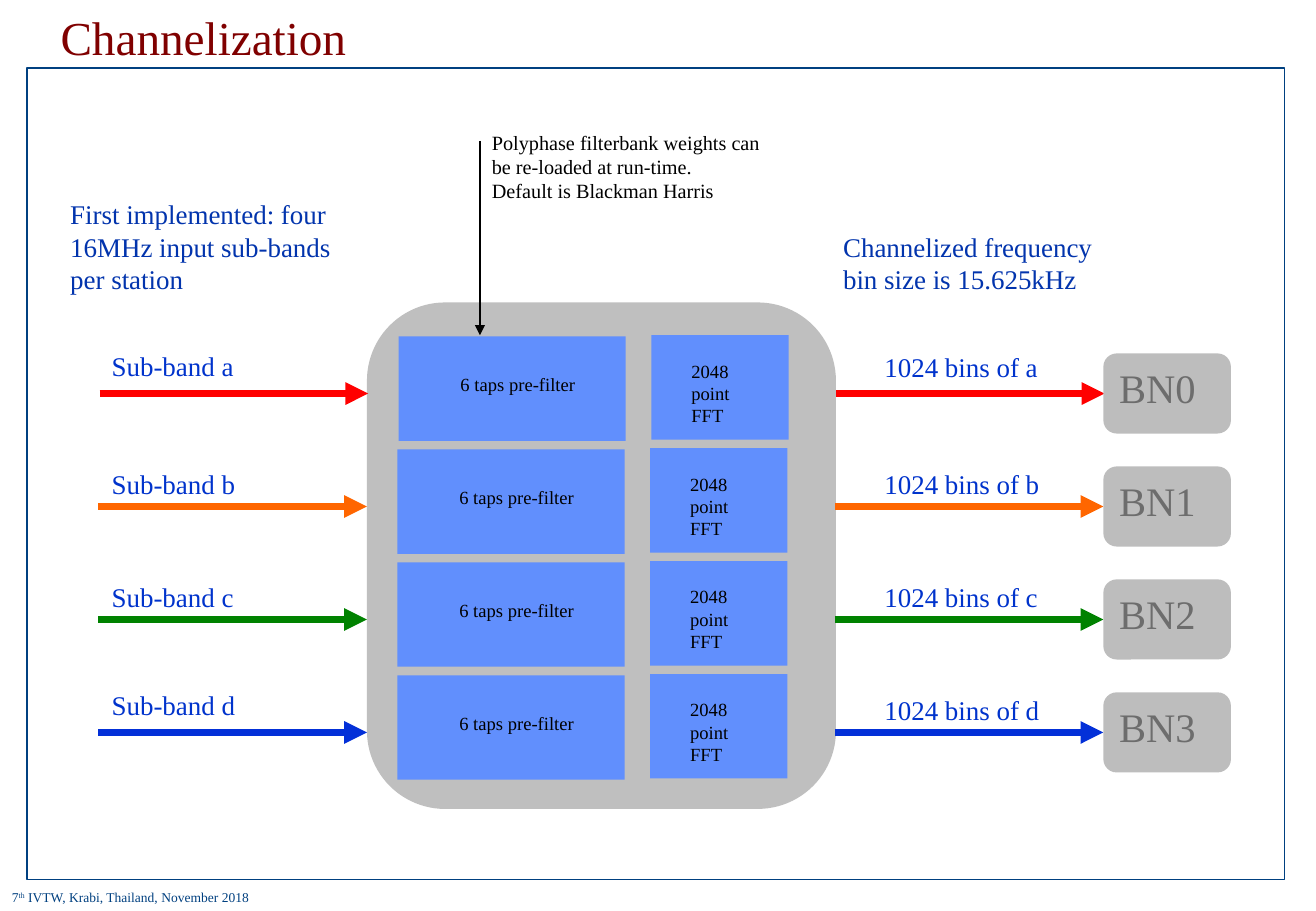
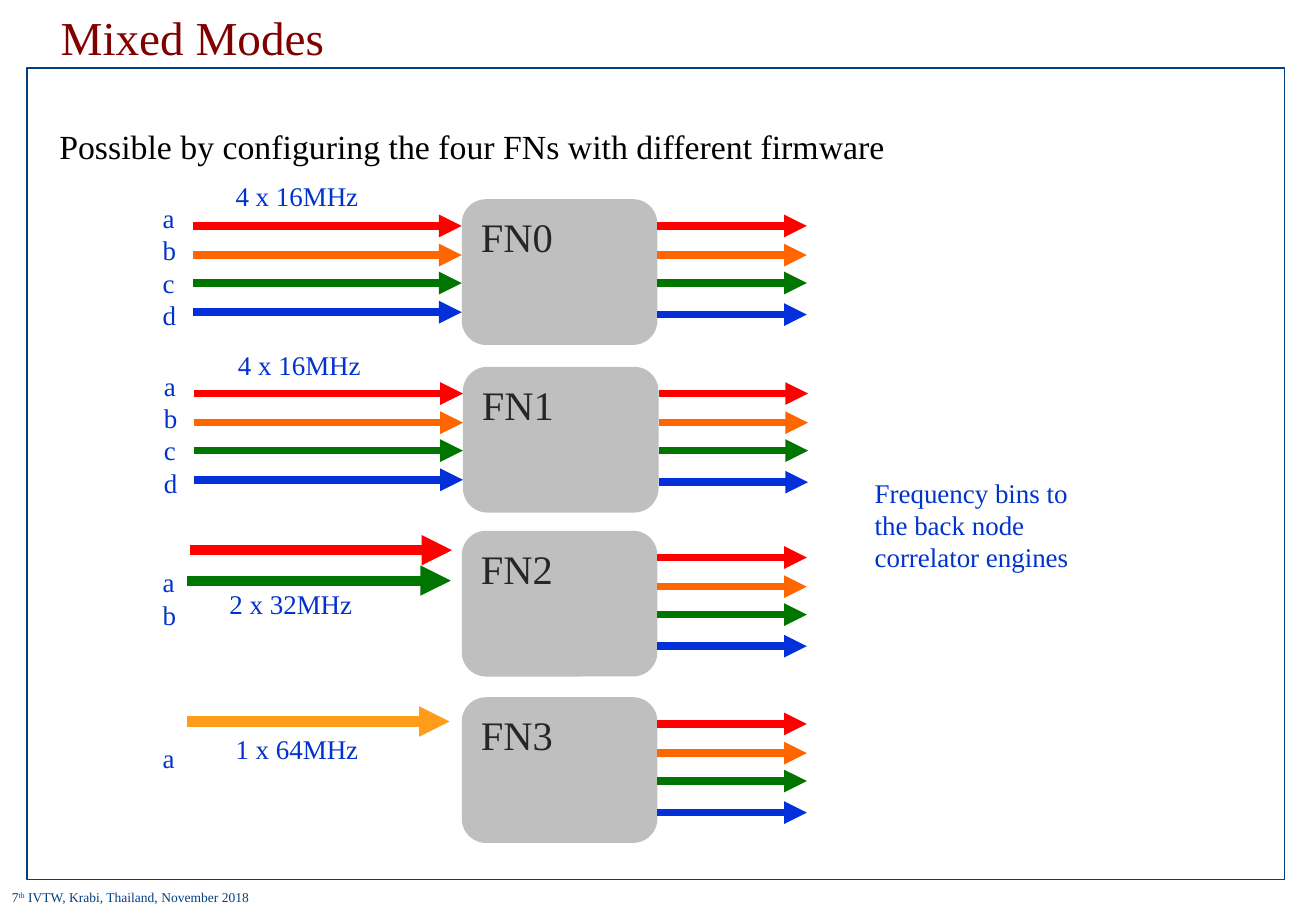
from lxml.etree import SubElement
from pptx import Presentation
from pptx.dml.color import RGBColor
from pptx.enum.shapes import MSO_CONNECTOR as Connector, MSO_SHAPE as Shape
from pptx.enum.text import MSO_ANCHOR as Anchor, PP_ALIGN as Align
from pptx.oxml.ns import qn
from pptx.util import Inches, Pt

FONT = "Times New Roman"
NAVY, MAROON, BLACK = "004080", "800000", "000000"
NOTE_BLUE, LABEL_BLUE, BLOCK_BLUE = "0234AD", "0033CC", "618FFD"
NODE_GREY, BACK_GREY, NODE_TEXT, BACK_TEXT = "BFBFBF", "BDBDBD", "262626", "6D6D6D"
RED, ORANGE, GREEN, BLUE, AMBER = "FF0000", "FF6600", "007600", "0330D8", "FF9D1B"
BANDS = "abcd"


def rgb(value):
    return RGBColor.from_string(value)


class Deck:
    """Holds the presentation, its shared style and the current slide."""

    def __init__(self):
        self.prs = Presentation()
        self.prs.slide_width, self.prs.slide_height = Inches(10.83), Inches(7.5)
        self.slide = None

    def new_slide(self, title):
        """Start a slide with the shared frame, footer and title."""
        self.slide = self.prs.slides.add_slide(self.prs.slide_layouts[6])
        self.block(0.22, 0.56, 10.35, 6.68, line=NAVY)
        self.footer()
        heading = self.text(0.4, 0, 8.98, 0.55, title, 28, MAROON)
        heading.vertical_anchor = Anchor.MIDDLE
        heading.paragraphs[0].line_spacing = 1.1

    def footer(self):
        frame = self.text(0, 7.27, 3.27, 0.24, "", 8, NAVY)
        paragraph = frame.paragraphs[0]
        for part in ("7", "th", " IVTW, Krabi, Thailand, November 2018"):
            run = paragraph.add_run()
            run.text = part
            self.style(run.font, 8, NAVY)
            if part == "th":
                run.font._element.set("baseline", "30000")

    def style(self, font, size, color):
        font.name, font.size = FONT, Pt(size)
        font.color.rgb = rgb(color)

    def fill_text(self, frame, text, size, color):
        """Fill a text frame, one paragraph per line, left and top aligned."""
        frame.text = text
        frame.vertical_anchor = Anchor.TOP
        for paragraph in frame.paragraphs:
            paragraph.alignment = Align.LEFT
            for run in paragraph.runs:
                self.style(run.font, size, color)

    def text(self, left, top, width, height, text, size, color, wrap=True):
        box = self.slide.shapes.add_textbox(
            Inches(left), Inches(top), Inches(width), Inches(height))
        frame = box.text_frame
        frame.word_wrap = wrap
        self.fill_text(frame, text, size, color)
        return frame

    def label(self, left, top, width, text):
        self.text(left, top, width, 0.37, text, 16, LABEL_BLUE, wrap=False)

    def block(self, left, top, width, height, fill=None, line=None, rounded=False):
        preset = Shape.ROUNDED_RECTANGLE if rounded else Shape.RECTANGLE
        block = self.slide.shapes.add_shape(
            preset, Inches(left), Inches(top), Inches(width), Inches(height))
        block.shadow.inherit = False
        if fill:
            block.fill.solid()
            block.fill.fore_color.rgb = rgb(fill)
        else:
            block.fill.background()
        if line:
            block.line.color.rgb = rgb(line)
            block.line.width = Pt(1)
        else:
            block.line.fill.background()
        return block

    def node(self, left, top, width, height, name, fill, color):
        node = self.block(left, top, width, height, fill, rounded=True)
        self.fill_text(node.text_frame, name, 24, color)

    def stage(self, left, top, width, text, insets):
        """Processing step; insets are left, top and right."""
        frame = self.block(left, top, width, 0.86, BLOCK_BLUE).text_frame
        frame.word_wrap = True
        frame.margin_left, frame.margin_top, frame.margin_right = map(Inches, insets)
        self.fill_text(frame, text, 11, BLACK)

    def arrow(self, start, end, color, width=4.5):
        arrow = self.slide.shapes.add_connector(
            Connector.STRAIGHT, *map(Inches, (*start, *end)))
        arrow.line.color.rgb = rgb(color)
        arrow.line.width = Pt(width)
        properties = arrow._element.spPr
        SubElement(properties.find(qn("a:ln")), qn("a:tailEnd"), type="triangle")
        SubElement(properties, qn("a:effectLst"))


def channelization(deck):
    deck.new_slide("Channelization")
    deck.block(3.02, 2.49, 3.86, 4.17, NODE_GREY, rounded=True)
    deck.text(0.48, 1.58, 2.53, 0.91,
              "First implemented: four 16MHz input sub-bands per station", 16, NOTE_BLUE)
    deck.text(3.95, 1.02, 2.53, 0.71,
              "Polyphase filterbank weights can be re-loaded at run-time.\n"
              "Default is Blackman Harris", 12, BLACK)
    deck.text(6.84, 1.85, 2.53, 0.64,
              "Channelized frequency bin size is 15.625kHz", 16, NOTE_BLUE)

    colors = (RED, ORANGE, "008200", BLUE)
    input_tops = (2.83, 3.8, 4.73, 5.62)
    output_tops = (2.84, 3.8, 4.73, 5.66)
    rows = zip(BANDS, colors, input_tops, output_tops)
    for row, (band, color, input_top, output_top) in enumerate(rows):
        drop = 0.93 * row
        shift = 0 if row else 0.01
        flow = 3.24 + drop
        deck.arrow((0.81 + shift, flow), (3.02 + shift, flow), color)
        deck.stage(3.27 + shift, 2.77 + drop, 1.87, "6 taps pre-filter", (0.51, 0.3, 0))
        deck.stage(5.35 + shift, 2.76 + drop, 1.13, "2048 point FFT", (0.33, 0.2, 0.29))
        deck.arrow((6.87 + shift, flow), (9.08 + shift, flow), color)
        deck.label(0.82, input_top, 1.22, f"Sub-band {band}")
        deck.label(7.18, output_top, 1.48, f"1024 bins of {band}")
        deck.node(9.08, 2.91 + drop, 1.05, 0.66, f"BN{row}", BACK_GREY, BACK_TEXT)
    deck.arrow((3.95, 1.16), (3.95, 2.76), BLACK, 0.75)


def mixed_modes(deck):
    deck.new_slide("Mixed Modes")
    deck.text(7.1, 3.87, 2.04, 0.91,
              "Frequency bins to the back node correlator engines", 16, LABEL_BLUE)
    deck.text(0.39, 0.99, 7, 0.44,
              "Possible by configuring the four FNs with different firmware", 20, BLACK)

    colors = (RED, ORANGE, GREEN, BLUE)
    # node left and top, sub-band count and list top, rate, rate left and top
    nodes = (
        (3.8, 1.64, 4, 1.61, "4 x 16MHz", 1.84, 1.43),
        (3.81, 3.02, 4, 2.99, "4 x 16MHz", 1.86, 2.82),
        (3.8, 4.37, 2, 4.61, "2 x 32MHz", 1.79, 4.79),
        (3.8, 5.74, 1, 6.06, "1 x 64MHz", 1.84, 5.98),
    )
    for number, (left, top, count, list_top, rate, rate_left, rate_top) in enumerate(nodes):
        deck.node(left, top, 1.61, 1.2, f"FN{number}", NODE_GREY, NODE_TEXT)
        deck.text(left - 2.56, list_top, 0.35, 0.1 + 0.27 * count,
                  "\n".join(BANDS[:count]), 16, LABEL_BLUE)
        deck.label(rate_left, rate_top, 1.25, rate)
        for color, offset in zip(colors, (0.22, 0.46, 0.69, 0.95)):
            flow = top + offset
            deck.arrow((left + 1.61, flow), (left + 2.84, flow), color)
            if count == 4:
                input_flow = min(flow, top + 0.93)
                deck.arrow((left - 2.21, input_flow), (left, input_flow), color)

    wide_inputs = ((1.56, 3.72, 4.53, RED), (1.54, 3.71, 4.78, GREEN),
                   (1.54, 3.7, 5.94, AMBER))
    for start, end, flow, color in wide_inputs:
        deck.arrow((start, flow), (end, flow), color, 6)


def main():
    deck = Deck()
    channelization(deck)
    mixed_modes(deck)
    deck.prs.save("out.pptx")


if __name__ == "__main__":
    main()
